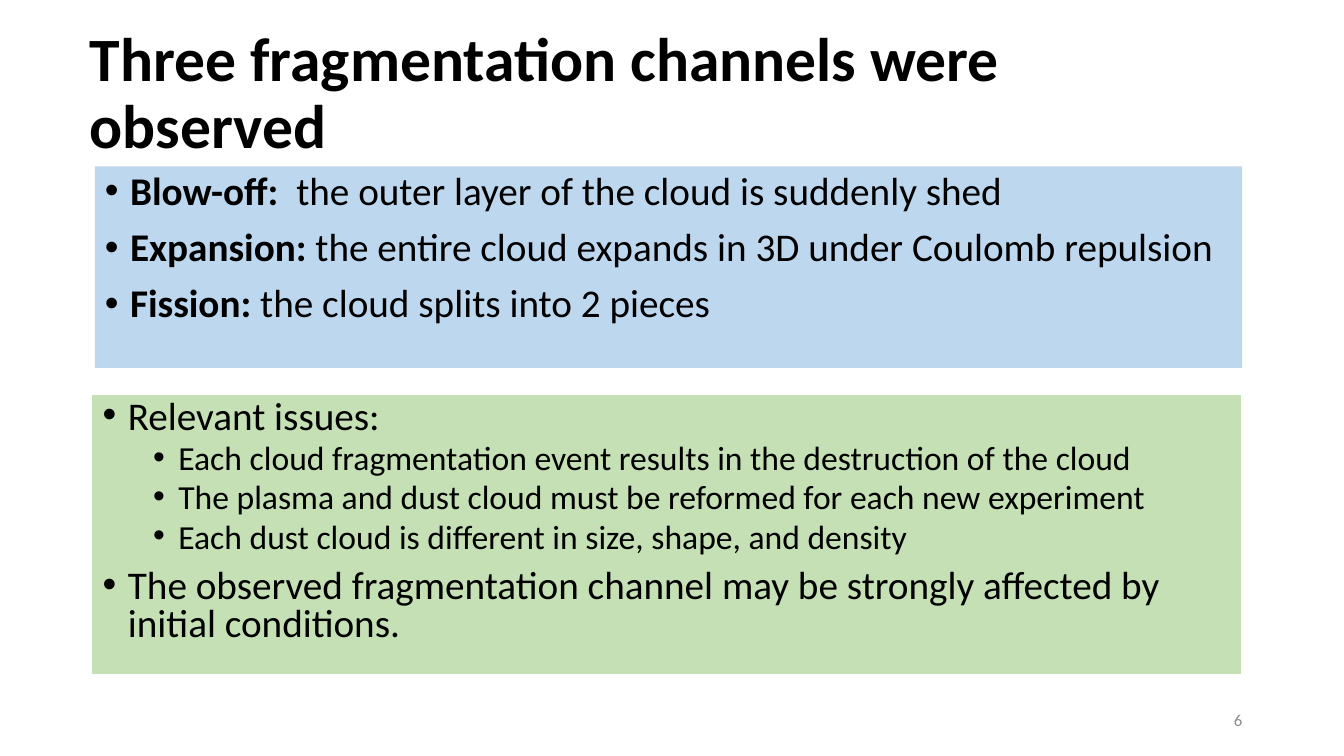
"""Build a slide on the three fragmentation channels of a dust cloud."""
from lxml import etree
from pptx import Presentation
from pptx.dml.color import RGBColor
from pptx.enum.shapes import MSO_SHAPE
from pptx.enum.text import MSO_ANCHOR, MSO_AUTO_SIZE, PP_ALIGN
from pptx.oxml.ns import qn
from pptx.util import Inches, Pt

RECTANGLE = MSO_SHAPE.RECTANGLE
TOP, MIDDLE = MSO_ANCHOR.TOP, MSO_ANCHOR.MIDDLE
LEFT, RIGHT = PP_ALIGN.LEFT, PP_ALIGN.RIGHT
NO_AUTOFIT = MSO_AUTO_SIZE.NONE

TITLE = "Three fragmentation channels were observed"
CHANNELS = [
    (0, "Blow-off:  ", "the outer layer of the cloud is suddenly shed"),
    (0, "Expansion: ", "the entire cloud expands in 3D under Coulomb repulsion"),
    (0, "Fission: ", "the cloud splits into 2 pieces"),
]
ISSUES = [
    (0, "", "Relevant issues:"),
    (1, "", "Each cloud fragmentation event results in the destruction of the cloud"),
    (1, "", "The plasma and dust cloud must be reformed for each new experiment"),
    (1, "", "Each dust cloud is different in size, shape, and density"),
    (0, "", "The observed fragmentation channel may be strongly affected by initial conditions."),
]
PAGE_NUMBER = "6"

FONT = "Calibri"
COLORS = {"text": "000000", "number": "8C8C8C", "channels": "BDD7EE", "issues": "C5E0B4"}
SLIDE_SIZE = (13.33, 7.5)
BOXES = {
    "title": (0.79, 0.22, 11.5, 1.45),
    "channels": (0.94, 1.65, 11.38, 2),
    "issues": (0.92, 3.92, 11.38, 2.76),
    "number": (9.42, 6.95, 3, 0.4),
}
LEVELS = [
    {"size": 28, "before": 10, "indent": 0.25},
    {"size": 24, "before": 5, "indent": 0.75},
]
HANGING = 0.25


def color(name):
    return RGBColor.from_string(COLORS[name])


def inches(name):
    return [Inches(length) for length in BOXES[name]]


def place(shape, name):
    shape.left, shape.top, shape.width, shape.height = inches(name)


def prepare(shape, anchor):
    frame = shape.text_frame
    frame.word_wrap = True
    frame.auto_size = NO_AUTOFIT
    frame.vertical_anchor = anchor
    return frame


def style(run, size, color_name="text", bold=False):
    run.font.name = FONT
    run.font.size = Pt(size)
    run.font.bold = bold
    run.font.color.rgb = color(color_name)


def write_line(shape, text, alignment, size, color_name="text", bold=False):
    frame = prepare(shape, MIDDLE)
    frame.text = text
    paragraph = frame.paragraphs[0]
    paragraph.alignment = alignment
    paragraph.line_spacing = 0.9
    style(paragraph.runs[0], size, color_name, bold)


def add_bullet(paragraph, indent):
    properties = paragraph._p.get_or_add_pPr()
    properties.set("marL", str(Inches(indent)))
    properties.set("indent", str(-Inches(HANGING)))
    etree.SubElement(properties, qn("a:buFont")).set("typeface", "Arial")
    etree.SubElement(properties, qn("a:buChar")).set("char", "•")


def write_list(shape, items, line_spacing):
    frame = prepare(shape, TOP)
    for index, (level, label, text) in enumerate(items):
        paragraph = frame.add_paragraph() if index else frame.paragraphs[0]
        look = LEVELS[level]
        paragraph.level = level
        paragraph.alignment = LEFT
        paragraph.line_spacing = line_spacing
        paragraph.space_before = Pt(look["before"])
        paragraph.space_after = Pt(0)
        add_bullet(paragraph, look["indent"])
        for part, bold in ((label, True), (text, False)):
            if part:
                run = paragraph.add_run()
                run.text = part
                style(run, look["size"], bold=bold)


def fill(shape, name):
    shape.fill.solid()
    shape.fill.fore_color.rgb = color(name)


def main():
    presentation = Presentation()
    presentation.slide_width, presentation.slide_height = map(Inches, SLIDE_SIZE)
    slide = presentation.slides.add_slide(presentation.slide_layouts[1])

    title, channels = slide.placeholders
    place(title, "title")
    write_line(title, TITLE, LEFT, 44, bold=True)

    place(channels, "channels")
    fill(channels, "channels")
    write_list(channels, CHANNELS, 0.9)

    number = slide.shapes.add_textbox(*inches("number"))
    write_line(number, PAGE_NUMBER, RIGHT, 12, "number")

    issues = slide.shapes.add_shape(RECTANGLE, *inches("issues"))
    issues.shadow.inherit = False
    fill(issues, "issues")
    issues.line.color.rgb = color("issues")
    issues.line.width = Pt(0.75)
    write_list(issues, ISSUES, 0.8)

    presentation.save("out.pptx")


if __name__ == "__main__":
    main()
